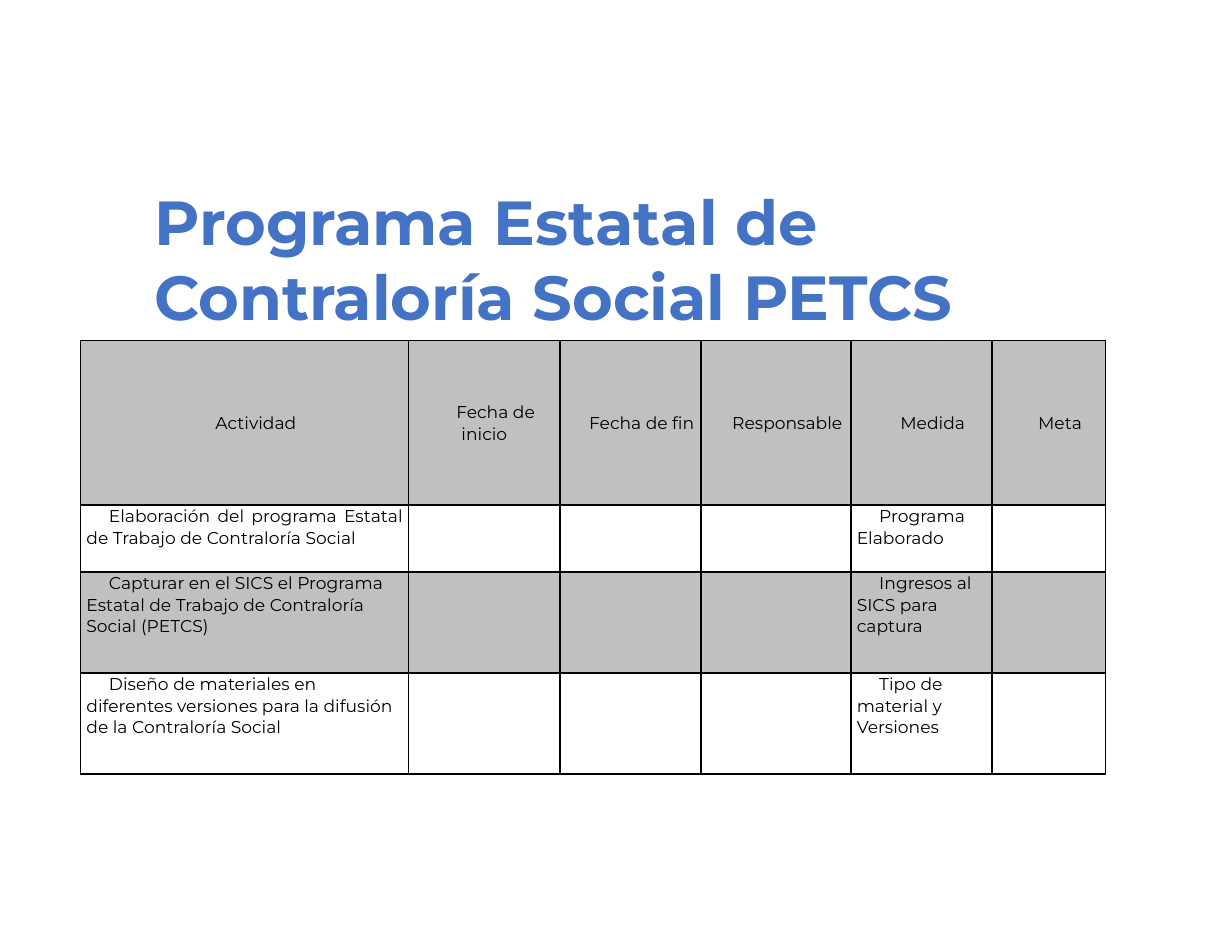
from lxml import etree
from pptx import Presentation
from pptx import util as u
from pptx.dml.color import RGBColor
from pptx.enum import text
from pptx.oxml.ns import qn

BLUE = RGBColor(0x44, 0x72, 0xC4)
GRAY = RGBColor(0xC0, 0xC0, 0xC0)
BLACK = RGBColor(0, 0, 0)

COLS = [7.44, 3.43, 3.2, 3.4, 3.2, 2.57]
ROWS = [3.73, 1.52, 2.29, 2.29]
HEADS = ["Actividad", "Fecha de inicio", "Fecha de fin", "Responsable", "Medida", "Meta"]
TASKS = [
    ("Elaboración del programa Estatal de Trabajo de Contraloría Social",
     "Programa Elaborado"),
    ("Capturar en el SICS el Programa Estatal de Trabajo de Contraloría Social (PETCS)",
     "Ingresos al SICS para captura"),
    ("Diseño de materiales en diferentes versiones para la difusión de la Contraloría Social",
     "Tipo de material y Versiones"),
]


def apply(item, values):
    for name, value in values.items():
        setattr(item, name, value)


class Page:
    face = "Montserrat"

    def __init__(self, deck):
        self.slide = deck.slides.add_slide(deck.slide_layouts[5])

    def font(self, para, size, color, bold=False):
        apply(para.font, {"name": self.face, "size": u.Pt(size), "bold": bold})
        para.font.color.rgb = color

    def title(self, words, left, top, width, height):
        box = self.slide.shapes.title
        apply(box, {"left": u.Cm(left), "top": u.Cm(top),
                    "width": u.Cm(width), "height": u.Cm(height)})
        frame = box.text_frame
        apply(frame, {"text": words, "word_wrap": True,
                      "vertical_anchor": text.MSO_ANCHOR.TOP,
                      "auto_size": text.MSO_AUTO_SIZE.SHAPE_TO_FIT_TEXT})
        para = frame.paragraphs[0]
        para.alignment = text.PP_ALIGN.LEFT
        self.font(para, 40, BLUE, True)

    def border(self, cell):
        props = cell._tc.get_or_add_tcPr()
        for side in ("lnL", "lnR", "lnT", "lnB"):
            line = etree.SubElement(props, qn("a:" + side), w=str(u.Pt(1)))
            fill = etree.SubElement(line, qn("a:solidFill"))
            etree.SubElement(fill, qn("a:srgbClr"), val=str(BLACK))

    def cell(self, cell, words, align, anchor, shade):
        self.border(cell)
        apply(cell, {"text": words, "vertical_anchor": anchor,
                     "margin_left": u.Cm(0.13), "margin_right": u.Cm(0.13),
                     "margin_top": 0, "margin_bottom": 0})
        if shade:
            cell.fill.solid()
            cell.fill.fore_color.rgb = GRAY
        else:
            cell.fill.background()
        para = cell.text_frame.paragraphs[0]
        para._p.get_or_add_pPr().set("indent", str(u.Cm(0.51)))
        apply(para, {"alignment": align, "line_spacing": u.Pt(14),
                     "space_after": u.Pt(5)})
        self.font(para, 11, BLACK)

    def table(self, data, left, top):
        table = self.slide.shapes.add_table(
            len(ROWS), len(COLS), u.Cm(left), u.Cm(top),
            u.Cm(sum(COLS)), u.Cm(sum(ROWS))).table
        apply(table, {"first_row": False, "horz_banding": False})
        for col, width in zip(table.columns, COLS):
            col.width = u.Cm(width)
        for row, height in zip(table.rows, ROWS):
            row.height = u.Cm(height)
        for r, line in enumerate(data):
            for c, words in enumerate(line):
                align, anchor = text.PP_ALIGN.LEFT, text.MSO_ANCHOR.TOP
                if r == 0:
                    align, anchor = text.PP_ALIGN.CENTER, text.MSO_ANCHOR.MIDDLE
                elif (r, c) == (1, 0):
                    align = text.PP_ALIGN.JUSTIFY
                self.cell(table.cell(r, c), words, align, anchor, r % 2 == 0)


def main():
    deck = Presentation()
    apply(deck, {"slide_width": u.Cm(27.94), "slide_height": u.Cm(21.59)})
    page = Page(deck)
    page.title("Programa Estatal de Contraloría Social PETCS", 3.25, 4.04, 20.19, 3.68)
    data = [HEADS] + [[task, "", "", "", gauge, ""] for task, gauge in TASKS]
    page.table(data, 1.83, 7.72)
    deck.save("out.pptx")


if __name__ == "__main__":
    main()
